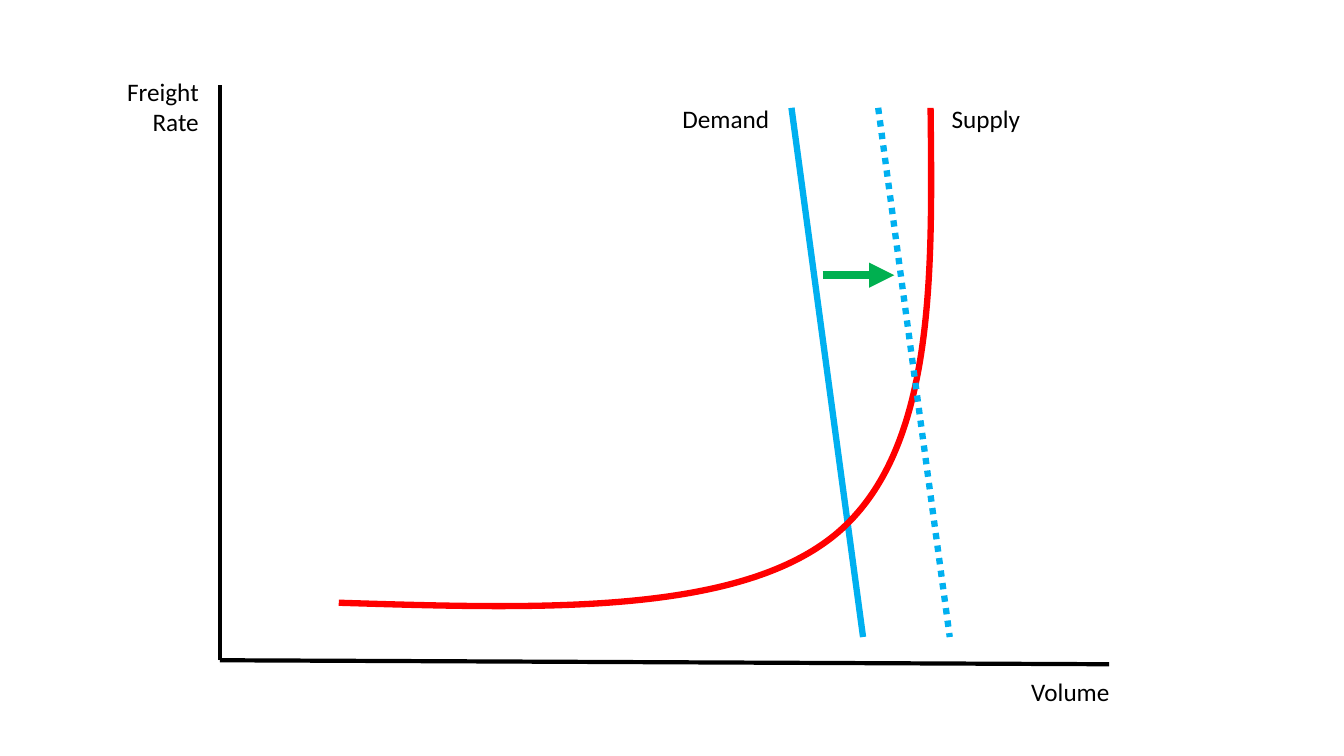
from dataclasses import dataclass

from lxml import etree
from pptx import Presentation
from pptx.dml.color import RGBColor
from pptx.enum.dml import MSO_LINE
from pptx.enum.shapes import MSO_CONNECTOR
from pptx.enum.text import MSO_AUTO_SIZE, PP_ALIGN
from pptx.oxml.ns import qn
from pptx.util import Pt

PX = 9144  # EMU per px, 100 px to the inch
BLANK_LAYOUT = 6
STRAIGHT = MSO_CONNECTOR.STRAIGHT
DOTTED = MSO_LINE.ROUND_DOT
FIT_TEXT = MSO_AUTO_SIZE.SHAPE_TO_FIT_TEXT
LEFT, RIGHT = PP_ALIGN.LEFT, PP_ALIGN.RIGHT


@dataclass(frozen=True)
class Theme:
    font: str = "Calibri"
    text_size: int = 18
    ink: str = "000000"
    demand: str = "00B0F0"
    supply: str = "FF0000"
    shift: str = "00B050"
    axis_width: float = 3
    curve_width: float = 4.5
    arrow_width: float = 6


THEME = Theme()


@dataclass(frozen=True)
class Box:
    left: int
    top: int
    width: int
    height: int

    def point(self, x, y):
        """Slide position in px of a point given relative to the box."""
        return self.left + x, self.top + y


def style_line(line, color, width):
    line.color.rgb = RGBColor.from_string(color)
    line.width = Pt(width)


def add_line(slide, start, end, color, width, dash=None, arrow=False):
    ends = [value * PX for value in (*start, *end)]
    connector = slide.shapes.add_connector(STRAIGHT, *ends)
    style_line(connector.line, color, width)
    if dash is not None:
        connector.line.dash_style = dash
    properties = connector._element.spPr
    if arrow:
        outline = properties.find(qn("a:ln"))
        etree.SubElement(outline, qn("a:tailEnd"), type="triangle")
    etree.SubElement(properties, qn("a:effectLst"))


def add_curve(slide, points, color, width):
    """Draw cubic Béziers: a start point, then three points per segment."""
    builder = slide.shapes.build_freeform(*points[0], scale=PX)
    builder.add_line_segments(points[1:], close=False)
    curve = builder.convert_to_shape()
    curve.shadow.inherit = False
    curve.fill.background()
    style_line(curve.line, color, width)

    path = next(curve._element.iter(qn("a:path")))
    corners = path.findall(qn("a:lnTo"))
    for first in range(0, len(corners), 3):
        bezier = etree.SubElement(path, qn("a:cubicBezTo"))
        for corner in corners[first:first + 3]:
            bezier.append(corner[0])
            path.remove(corner)


def add_label(slide, position, size, lines, alignment=LEFT):
    bounds = [value * PX for value in (*position, *size)]
    frame = slide.shapes.add_textbox(*bounds).text_frame
    frame.word_wrap = True
    frame.auto_size = FIT_TEXT
    paragraph = frame.paragraphs[0]
    paragraph.alignment = alignment
    for index, line in enumerate(lines):
        if index:
            paragraph.add_line_break()
        run = paragraph.add_run()
        run.text = line
        run.font.name = THEME.font
        run.font.size = Pt(THEME.text_size)
        run.font.color.rgb = RGBColor.from_string(THEME.ink)


def add_axes(slide, box):
    origin = box.point(0, box.height - 4)
    for end in (box.point(0, 0), box.point(box.width, box.height)):
        add_line(slide, origin, end, THEME.ink, THEME.axis_width)
    add_label(slide, box.point(box.width - 87, box.height + 7), (160, 40), ["Volume"])
    add_label(slide, box.point(-162, -13), (151, 71), ["Freight", "Rate"], RIGHT)


def add_demand(slide, box, shift=0, dash=None):
    add_line(slide, box.point(567 + shift, 23), box.point(638 + shift, 548),
             THEME.demand, THEME.curve_width, dash)


def add_supply(slide, box):
    points = [(118, 514), (315, 520), (513, 527), (611, 446),
              (709, 364), (707, 194), (705, 23)]
    add_curve(slide, [box.point(*point) for point in points],
              THEME.supply, THEME.curve_width)


def add_supply_demand_diagram(slide, box):
    add_demand(slide, box)
    add_axes(slide, box)
    add_supply(slide, box)
    add_label(slide, box.point(716, 14), (149, 40), ["Supply"])
    add_label(slide, box.point(449, 14), (188, 40), ["Demand"])
    add_demand(slide, box, shift=86, dash=DOTTED)
    add_line(slide, box.point(598, 189), box.point(669, 189),
             THEME.shift, THEME.arrow_width, arrow=True)


def main():
    presentation = Presentation()
    presentation.slide_width = 1333 * PX
    presentation.slide_height = 750 * PX
    slide = presentation.slides.add_slide(presentation.slide_layouts[BLANK_LAYOUT])
    add_supply_demand_diagram(slide, Box(218, 84, 882, 575))
    presentation.save("out.pptx")


if __name__ == "__main__":
    main()
